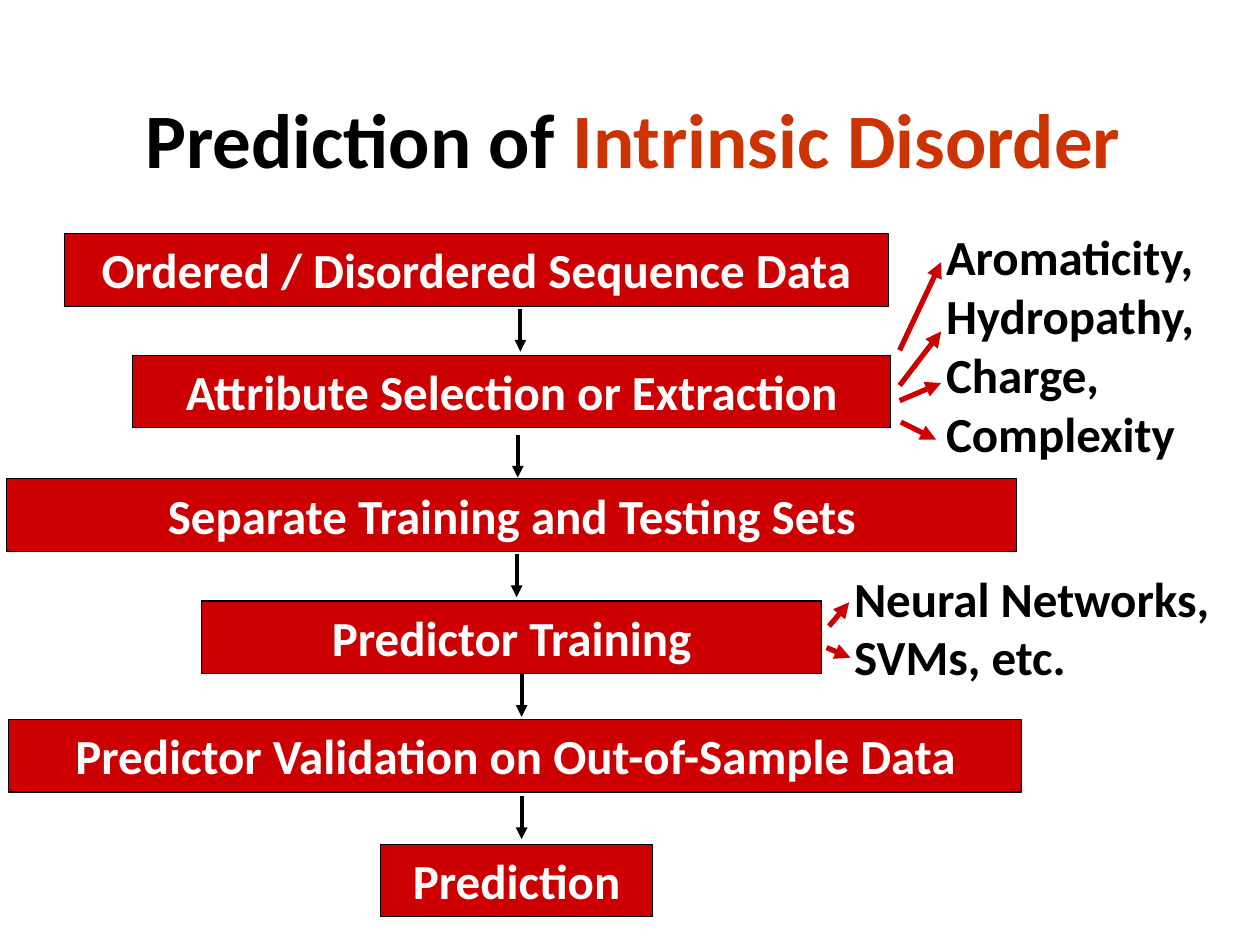
from dataclasses import dataclass

from lxml.etree import SubElement
from pptx import Presentation
from pptx.dml.color import RGBColor
from pptx.enum.shapes import MSO_CONNECTOR as Link, MSO_SHAPE as Shape
from pptx.enum.text import MSO_ANCHOR as Anchor, PP_ALIGN as Align
from pptx.oxml.ns import qn
from pptx.util import Inches, Pt

COLS, ROWS = 100, 75
BLACK, WHITE, RED, RUST = "000000", "FFFFFF", "CC0000", "CC3300"

deck = Presentation()
deck.slide_width, deck.slide_height = Inches(10), Inches(7.5)
slide = deck.slides.add_slide(deck.slide_layouts[6])


@dataclass
class Step:
    text: str
    left: float
    top: float
    width: float


@dataclass
class Note:
    lines: list[str]
    left: float
    top: float
    width: float
    height: float


@dataclass
class Arrow:
    x: float
    y: float
    to_x: float
    to_y: float


def across(cols: float) -> int:
    return round(deck.slide_width * cols / COLS)


def down(rows: float) -> int:
    return round(deck.slide_height * rows / ROWS)


def place(left: float, top: float, width: float, height: float) -> tuple:
    return across(left), down(top), across(width), down(height)


def tint(color: str) -> RGBColor:
    return RGBColor.from_string(color)


def style(run, size: float, color: str) -> None:
    font = run.font
    font.name, font.size, font.bold = "Calibri", Pt(size), True
    font.color.rgb = tint(color)


def draw_title(black: str, rust: str) -> None:
    frame = slide.shapes.add_textbox(*place(3.9, 4.7, 94.1, 12.5)).text_frame
    frame.word_wrap = True
    frame.vertical_anchor = Anchor.MIDDLE
    line = frame.paragraphs[0]
    line.alignment = Align.CENTER
    for text, color in ((black, BLACK), (rust, RUST)):
        run = line.add_run()
        run.text = text
        style(run, 44, color)


def draw_step(step: Step) -> None:
    box = slide.shapes.add_shape(
        Shape.RECTANGLE, *place(step.left, step.top, step.width, 5.75))
    box.shadow.inherit = False
    box.fill.solid()
    box.fill.fore_color.rgb = tint(RED)
    box.line.color.rgb = tint(BLACK)
    box.line.width = Pt(0.75)
    frame = box.text_frame
    frame.word_wrap = True
    frame.vertical_anchor = Anchor.TOP
    frame.text = step.text
    line = frame.paragraphs[0]
    line.alignment = Align.CENTER
    style(line.runs[0], 28, WHITE)


def draw_note(note: Note) -> None:
    frame = slide.shapes.add_textbox(
        *place(note.left, note.top, note.width, note.height)).text_frame
    frame.word_wrap = False
    frame.text = "\n".join(note.lines)
    for line in frame.paragraphs:
        line.alignment = Align.LEFT
        style(line.runs[0], 28, BLACK)


def draw_arrow(arrow: Arrow, color: str, width: float) -> None:
    link = slide.shapes.add_connector(
        Link.STRAIGHT, across(arrow.x), down(arrow.y),
        across(arrow.to_x), down(arrow.to_y))
    link.line.color.rgb = tint(color)
    link.line.width = Pt(width)
    SubElement(link.line._get_or_add_ln(), qn("a:tailEnd"), type="triangle")
    SubElement(link._element.spPr, qn("a:effectLst"))


STEPS = [
    Step("Ordered / Disordered Sequence Data", 5.1, 18.55, 65.4),
    Step("Attribute Selection or Extraction", 10.5, 28.2, 60.2),
    Step("Separate Training and Testing Sets", 0.5, 38, 80.2),
    Step("Predictor Training", 16, 47.7, 49.2),
    Step("Predictor Validation on Out-of-Sample Data", 0.7, 57.1, 80.4),
    Step("Prediction", 30.2, 67, 21.6),
]
DROPS = [(41.3, 24.5), (41.1, 34.5), (41, 44), (41.4, 53.5), (41.4, 63.2)]
DROP = 3.4
NOTES = [
    Note(["Aromaticity,", "Hydropathy,", "Charge,", "Complexity"],
         74.1, 17.5, 22.8, 19.9),
    Note(["Neural Networks,", "SVMs, etc."], 66.8, 44.6, 30.6, 10.4),
]
HINTS = [
    Arrow(71.4, 27.8, 74.7, 20.8),
    Arrow(71.4, 30.6, 74.7, 26.3),
    Arrow(71.4, 31.8, 74.7, 30.4),
    Arrow(71.5, 33.5, 74.3, 34.9),
    Arrow(65.8, 49.7, 67.4, 47.8),
    Arrow(65.6, 51.4, 67.5, 52.2),
]

draw_title("Prediction of ", "Intrinsic Disorder ")
for x, y in DROPS:
    draw_arrow(Arrow(x, y, x, y + DROP), BLACK, 2.25)
for step in STEPS:
    draw_step(step)
for note in NOTES:
    draw_note(note)
for hint in HINTS:
    draw_arrow(hint, RED, 3)

deck.save("out.pptx")
